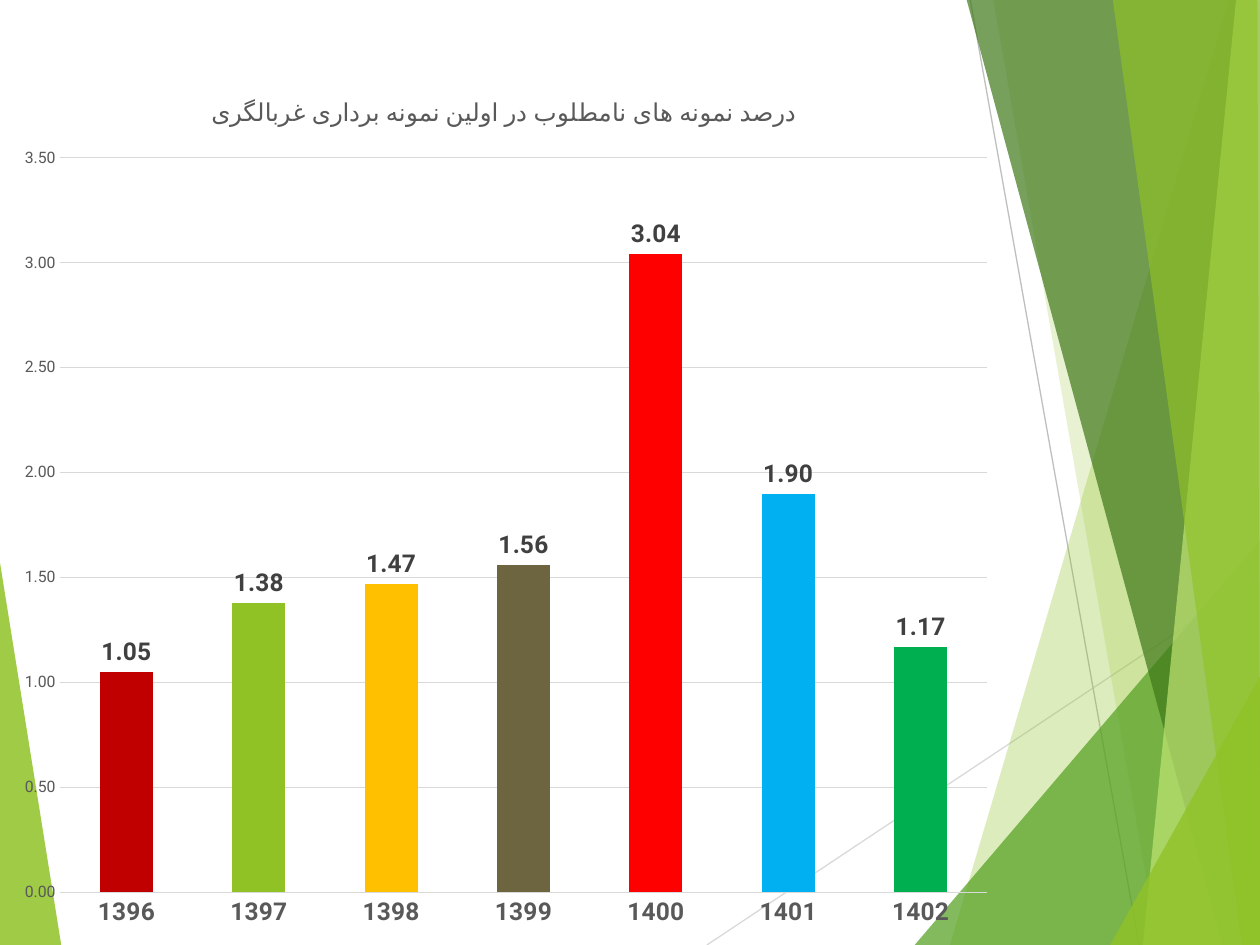
"""Build a slide with a column chart of unsuitable samples by year."""
from lxml import etree
from pptx import Presentation
from pptx.chart.data import CategoryChartData
from pptx.dml.color import RGBColor
from pptx.enum.chart import XL_CHART_TYPE, XL_LABEL_POSITION, XL_TICK_MARK
from pptx.enum.shapes import MSO_CONNECTOR
from pptx.oxml import parse_xml
from pptx.oxml.ns import nsdecls, qn
from pptx.util import Cm, Pt

COLUMN = XL_CHART_TYPE.COLUMN_CLUSTERED
OUTSIDE = XL_LABEL_POSITION.OUTSIDE_END
NO_TICK = XL_TICK_MARK.NONE
STRAIGHT = MSO_CONNECTOR.STRAIGHT
FACE = "Roboto"
HUES = {
    "lime": "90C226", "leaf": "54A021", "moss": "3F7819", "pale": "C0E474",
    "grid": "D9D9D9", "ray": "BFBFBF", "text": "595959", "label": "404040",
    "wine": "C00000", "gold": "FFC000", "olive": "6D6540", "red": "FF0000",
    "sky": "00B0F0", "green": "00B050",
}


def style(font, size, hue, bold=False):
    font.name = FACE
    font.size = Pt(size)
    font.bold = bold
    font.color.rgb = RGBColor.from_string(HUES[hue])


def write(frame, text, **form):
    run = frame.paragraphs[0].add_run()
    run.text = text
    style(run.font, **form)


deck = Presentation()
deck.slide_width, deck.slide_height = Cm(25.4), Cm(19.05)
slide = deck.slides.add_slide(deck.slide_layouts[6])
shapes = slide.shapes

rays = [("grid", 14.25, 19.05, 25.43, 11.61), ("ray", 19.56, 0, 22.96, 19.05)]
for hue, *ends in rays:
    ray = shapes.add_connector(STRAIGHT, *map(Cm, ends))
    ray.line.width = Pt(0.75)
    ray.line.color.rgb = RGBColor.from_string(HUES[hue])
    etree.SubElement(ray.element.spPr, qn("a:effectLst"))

shards = [
    ("lime", 85, [(-0.03, 11.15), (1.24, 19.08), (-0.03, 19.05)]),
    ("lime", 30, [(24.77, 0), (19.15, 19.05), (25.45, 19.08), (25.43, 0.03)]),
    ("lime", 20, [(20.02, -0.03), (23.34, 19.05), (25.43, 19.05), (25.43, -0.03)]),
    ("leaf", 72, [(18.44, 19.05), (25.4, 10.9), (25.43, 19.05)]),
    ("moss", 70, [(19.48, -0.03), (24.64, 19.05), (25.43, 19.02), (25.43, -0.03)]),
    ("pale", 70, [(24.92, -0.03), (23.04, 19.05), (25.43, 19.05), (25.4, -0.03)]),
    ("lime", 65, [(22.43, -0.03), (25.04, 19.05), (25.4, 19.05), (25.35, -0.03)]),
    ("lime", 80, [(22.38, 19.05), (25.43, 13.59), (25.43, 19.05)]),
]
for hue, alpha, spots in shards:
    start, *rest = [(Cm(x), Cm(y)) for x, y in spots]
    pen = shapes.build_freeform(*start)
    pen.add_line_segments(rest, close=True)
    shard = pen.convert_to_shape()
    shard.shadow.inherit = False
    shard.line.fill.background()
    shard.fill.solid()
    shard.fill.fore_color.rgb = RGBColor.from_string(HUES[hue])
    tint = shard.element.spPr.find(".//" + qn("a:srgbClr"))
    etree.SubElement(tint, qn("a:alpha")).set("val", str(alpha * 1000))

data = CategoryChartData(number_format="0.00")
data.categories = [str(year) for year in range(1396, 1403)]
data.add_series("Series 1", [1.05, 1.38, 1.47, 1.56, 3.04, 1.90, 1.17])
box = map(Cm, (0, 1.42, 20.3, 17.63))
chart = shapes.add_chart(COLUMN, *box, data).chart
chart.has_legend = False
chart.font.name, chart.font.size = FACE, Pt(10)
chart.has_title = True
write(chart.chart_title.text_frame,
      "درصد نمونه های نامطلوب در اولین نمونه برداری غربالگری",
      size=14, hue="text")
chart.chart_title.include_in_layout = False

years, scale = chart.category_axis, chart.value_axis
for axis, size, bold in [(years, 14, True), (scale, 9, False)]:
    axis.major_tick_mark = axis.minor_tick_mark = NO_TICK
    axis.format.line.fill.background()
    style(axis.tick_labels.font, size, "text", bold)
scale.minimum_scale, scale.maximum_scale, scale.major_unit = 0, 3.5, 0.5
scale.tick_labels.number_format = "0.00"
scale.tick_labels.number_format_is_linked = False
grid = scale.major_gridlines.format.line
grid.width = Pt(0.75)
grid.color.rgb = RGBColor.from_string(HUES["grid"])

plot = chart.plots[0]
plot.gap_width = 150
plot.vary_by_categories = False
bars = plot.series[0]
tones = ["wine", "lime", "gold", "olive", "red", "sky", "green"]
for i, tone in enumerate(tones):
    fill = bars.points[i].format.fill
    fill.solid()
    fill.fore_color.rgb = RGBColor.from_string(HUES[tone])
tags = bars.data_labels
tags.show_value = True
tags.position = OUTSIDE
tags.number_format, tags.number_format_is_linked = "0.00", False
style(tags.font, 14, "label", True)

area = chart.element.find(".//" + qn("c:plotArea"))
for old in area.findall(qn("c:layout")):
    area.remove(old)
frame = {"x": 0.06, "y": 0.1, "w": 0.92, "h": 0.84}
parts = '<c:layoutTarget val="inner"/><c:xMode val="edge"/><c:yMode val="edge"/>'
parts += "".join(f'<c:{key} val="{part}"/>' for key, part in frame.items())
area.insert(0, parse_xml(
    f'<c:layout {nsdecls("c")}><c:manualLayout>{parts}</c:manualLayout></c:layout>'))

deck.save("out.pptx")
